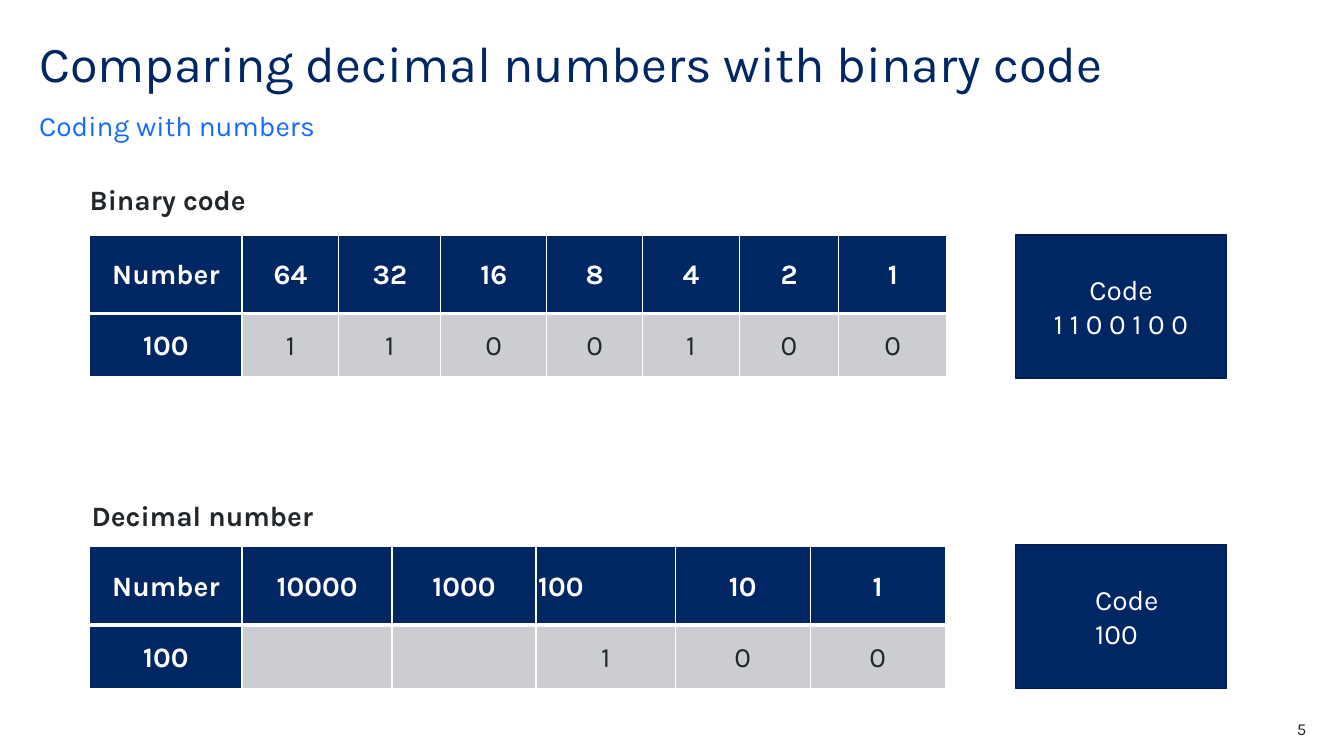
from dataclasses import dataclass

from lxml.etree import SubElement
from pptx import Presentation
from pptx.dml.color import RGBColor
from pptx.enum.shapes import MSO_SHAPE as SHAPE
from pptx.enum.text import MSO_ANCHOR as ANCHOR, MSO_AUTO_SIZE as FIT, PP_ALIGN as ALIGN
from pptx.oxml.ns import qn
from pptx.util import Cm, Pt

FONT = "Karla"
COLORS = {
    "navy": "002664",
    "outline": "001C4A",
    "blue": "146CFD",
    "ink": "22272B",
    "grey": "CCCDD3",
    "white": "FFFFFF",
}
LEFT = 2.26
ROW_HEIGHTS = (1.98, 1.6)


@dataclass
class Label:
    text: str
    left: float
    top: float
    width: float
    height: float
    size: int = 20
    color: str = "ink"
    bold: bool = False
    align: ALIGN = ALIGN.LEFT
    anchor: ANCHOR = ANCHOR.TOP


@dataclass
class NumberTable:
    top: float
    widths: tuple[float, ...]
    rows: tuple[tuple[str, ...], ...]
    left_aligned: tuple[str, ...] = ()


@dataclass
class CodeBox:
    text: str
    top: float
    height: float
    align: ALIGN
    indent: float = 0


LABELS = [
    Label("Coding with numbers", 0.99, 2.72, 27.99, 0.86, color="blue", anchor=ANCHOR.BOTTOM),
    Label("Binary code", LEFT, 4.6, 4.95, 1.27, bold=True),
    Label("Decimal number", 2.31, 12.55, 20.17, 0.86, bold=True),
    Label("5", 30.91, 18.11, 2.01, 0.51, size=12, align=ALIGN.RIGHT),
]
TABLES = [
    NumberTable(
        5.92,
        (3.84, 2.44, 2.57, 2.67, 2.41, 2.44, 2.51, 2.72),
        (
            ("Number", "64", "32", "16", "8", "4", "2", "1"),
            ("100", "1", "1", "0", "0", "1", "0", "0"),
        ),
    ),
    NumberTable(
        13.77,
        (3.84, 3.78, 3.63, 3.51, 3.4, 3.4),
        (
            ("Number", "10000", "1000", "100", "10", "1"),
            ("100", "", "", "1", "0", "0"),
        ),
        left_aligned=("100",),
    ),
]
CODE_BOXES = [
    CodeBox("Code\n1 1 0 0 1 0 0", 5.92, 3.61, ALIGN.CENTER),
    CodeBox("Code\n100", 13.72, 3.63, ALIGN.LEFT, indent=1.75),
]


def rgb(name: str) -> RGBColor:
    return RGBColor.from_string(COLORS[name])


def write(tf, text: str, *, size: int = 20, color: str = "ink", bold: bool = False,
          align: ALIGN = ALIGN.LEFT, spacing: float = 1.0, after: float = 0,
          indent: float = 0) -> None:
    for i, line in enumerate(text.split("\n")):
        p = tf.add_paragraph() if i else tf.paragraphs[0]
        p.alignment = align
        p.line_spacing = spacing
        p.space_before = Pt(0)
        p.space_after = Pt(after)
        if indent:
            p._p.get_or_add_pPr().set("marL", str(Cm(indent)))
        r = p.add_run()
        r.text = line
        r.font.name = FONT
        r.font.size = Pt(size)
        r.font.bold = bold
        r.font.color.rgb = rgb(color)


def set_frame(tf, anchor: ANCHOR) -> None:
    tf.word_wrap = True
    tf.auto_size = FIT.NONE
    tf.vertical_anchor = anchor
    tf.margin_left = tf.margin_right = tf.margin_top = tf.margin_bottom = 0


def add_title(s, text: str) -> None:
    sp = s.shapes.title
    sp.left, sp.top, sp.width, sp.height = Cm(0.99), Cm(0.99), Cm(27.99), Cm(1.52)
    set_frame(sp.text_frame, ANCHOR.TOP)
    write(sp.text_frame, text, size=36, color="navy", spacing=0.9)


def add_label(s, label: Label) -> None:
    sp = s.shapes.add_textbox(Cm(label.left), Cm(label.top), Cm(label.width), Cm(label.height))
    set_frame(sp.text_frame, label.anchor)
    write(sp.text_frame, label.text, size=label.size, color=label.color,
          bold=label.bold, align=label.align)


def set_borders(cell, bottom: float) -> None:
    tc_pr = cell._tc.get_or_add_tcPr()
    for side, width in (("L", 1), ("R", 1), ("T", 1), ("B", bottom)):
        ln = SubElement(tc_pr, qn(f"a:ln{side}"), w=str(Pt(width)))
        SubElement(SubElement(ln, qn("a:solidFill")), qn("a:srgbClr"), val=COLORS["white"])


def add_number_table(s, spec: NumberTable) -> None:
    frame = s.shapes.add_table(len(spec.rows), len(spec.widths), Cm(LEFT), Cm(spec.top),
                               Cm(sum(spec.widths)), Cm(sum(ROW_HEIGHTS)))
    table = frame.table
    table.horz_banding = False
    for column, width in zip(table.columns, spec.widths):
        column.width = Cm(width)
    for i, (row, height) in enumerate(zip(spec.rows, ROW_HEIGHTS)):
        table.rows[i].height = Cm(height)
        for j, text in enumerate(row):
            cell = table.cell(i, j)
            heading = i == 0 or j == 0
            set_borders(cell, bottom=3 if i == 0 else 1)
            cell.fill.solid()
            cell.fill.fore_color.rgb = rgb("navy" if heading else "grey")
            cell.vertical_anchor = ANCHOR.MIDDLE
            cell.margin_left = cell.margin_right = Cm(0.05)
            cell.margin_top = cell.margin_bottom = Cm(0.05)
            if text:
                to_left = i == 0 and text in spec.left_aligned
                write(cell.text_frame, text, color="white" if heading else "ink", bold=heading,
                      align=ALIGN.LEFT if to_left else ALIGN.CENTER, spacing=1.07, after=8)


def add_code_box(s, box: CodeBox) -> None:
    sp = s.shapes.add_shape(SHAPE.RECTANGLE, Cm(25.6), Cm(box.top), Cm(5.31), Cm(box.height))
    sp.shadow.inherit = False
    sp.fill.solid()
    sp.fill.fore_color.rgb = rgb("navy")
    sp.line.color.rgb = rgb("outline")
    sp.line.width = Pt(1)
    tf = sp.text_frame
    tf.word_wrap = True
    tf.vertical_anchor = ANCHOR.MIDDLE
    write(tf, box.text, color="white", align=box.align, indent=box.indent)


def main() -> None:
    prs = Presentation()
    prs.slide_width, prs.slide_height = Cm(33.87), Cm(19.05)
    s = prs.slides.add_slide(prs.slide_layouts[5])
    add_title(s, "Comparing decimal numbers with binary code")
    for label in LABELS:
        add_label(s, label)
    for spec in TABLES:
        add_number_table(s, spec)
    for box in CODE_BOXES:
        add_code_box(s, box)
    prs.save("out.pptx")


if __name__ == "__main__":
    main()
